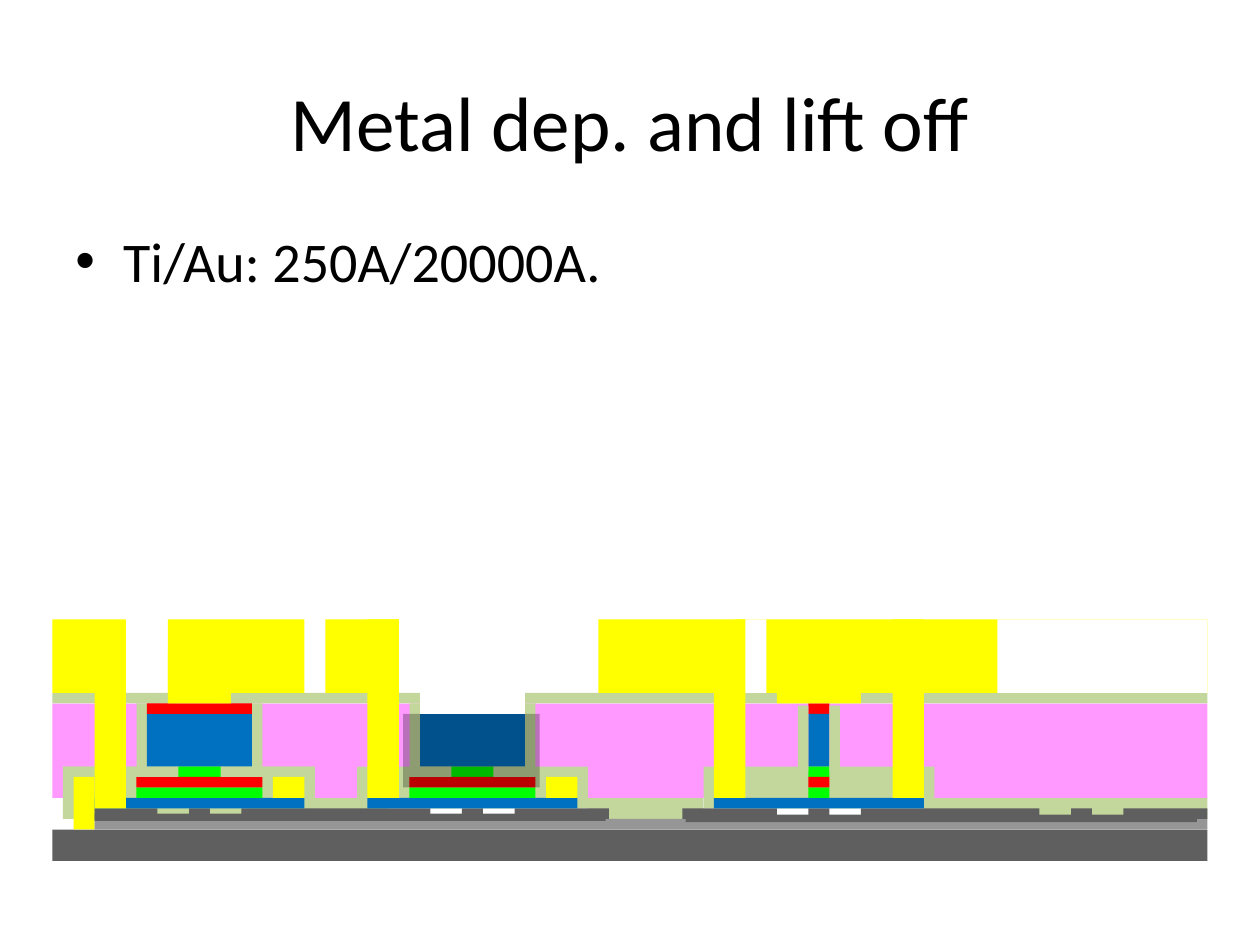
from lxml import etree
from pptx import Presentation
from pptx.dml.color import RGBColor
from pptx.enum import shapes, text
from pptx.oxml import ns
from pptx.util import Inches, Pt

BLACK = RGBColor(0x00, 0x00, 0x00)
WHITE = RGBColor(0xFF, 0xFF, 0xFF)
NITRIDE = RGBColor(0xC3, 0xD6, 0x9B)
POLYMER = RGBColor(0xFF, 0x99, 0xFF)
SILICON = RGBColor(0x5F, 0x5F, 0x5F)
OXIDE = RGBColor(0x96, 0x96, 0x96)
BLUE = RGBColor(0x00, 0x70, 0xC0)
GREEN = RGBColor(0x00, 0xFF, 0x00)
RED = RGBColor(0xFF, 0x00, 0x00)
METAL = RGBColor(0xFF, 0xFF, 0x00)

UNIT = 1 / 12  # the cross-section sits on a grid of twelfths of an inch

prs = Presentation()
prs.slide_width, prs.slide_height = Inches(10), Inches(7.5)
s = prs.slides.add_slide(prs.slide_layouts[6])


def add_text(top, height, words, size):
    tf = s.shapes.add_textbox(Inches(0.5), Inches(top), Inches(9), Inches(height)).text_frame
    tf.word_wrap = True
    p = tf.paragraphs[0]
    p.text = words
    font = p.runs[0].font
    font.name, font.size, font.color.rgb = "Calibri", Pt(size), BLACK
    return tf, p


def add_layer(color, *boxes):
    for box in boxes:
        sp = s.shapes.add_shape(shapes.MSO_SHAPE.RECTANGLE, *[Inches(v * UNIT) for v in box])
        sp.shadow.inherit = False
        sp.fill.solid()
        sp.fill.fore_color.rgb = color
        sp.line.fill.background()
    return sp


# Title
tf, p = add_text(0.33, 1.25, "Metal dep. and lift off", 44)
tf.vertical_anchor = text.MSO_ANCHOR.MIDDLE
p.alignment = text.PP_ALIGN.CENTER

# Bullet
tf, p = add_text(1.75, 3, "Ti/Au: 250A/20000A.", 32)
pPr = p._p.get_or_add_pPr()
pPr.set("marL", str(Inches(0.38)))
pPr.set("indent", str(-Inches(0.38)))
before = etree.SubElement(pPr, ns.qn("a:spcBef"))
etree.SubElement(before, ns.qn("a:spcPct"), val="20000")
etree.SubElement(pPr, ns.qn("a:buFont"), typeface="Arial")
etree.SubElement(pPr, ns.qn("a:buChar"), char="•")

# Passivation and planarising fill: left, top, width, height in grid units
add_layer(NITRIDE, (5, 66, 110, 1))
add_layer(POLYMER, (5, 67, 110, 9))
add_layer(NITRIDE, (88, 76, 27, 2), (26, 76, 11, 2), (56, 76, 11, 2),
          (34, 73, 22, 4), (6, 73, 24, 5), (67, 73, 22, 4))

# Substrate, buried oxide and waveguide layer with its slots
add_layer(OXIDE, (9, 78, 49, 1), (58, 78, 57, 1))
add_layer(SILICON, (5, 79, 110, 3))
for left, width in [(9, 6), (18, 2), (23, 18), (44, 2), (49, 9), (65, 9),
                    (77, 2), (82, 17), (102, 2), (107, 8)]:
    add_layer(SILICON, (left, 77, width, 1))
add_layer(SILICON, (9, 77.5, 48.7, 0.7), (65.3, 77.6, 48.7, 0.7))

# Bottom contact layers
for left in (9, 35, 68):
    add_layer(BLUE, (left, 76, 20, 1))

# Two wide mesas with their side walls
for left in (13, 39):
    add_layer(GREEN, (left, 75, 12, 1), (left + 1, 73, 10, 1))
    add_layer(RED, (left, 74, 12, 1))
    add_layer(NITRIDE, (left, 67, 4, 7), (left + 8, 67, 4, 7))
    add_layer(BLUE, (left + 1, 68, 10, 5))
add_layer(RED, (14, 67, 10, 1))

# Narrow pillar with its side walls
add_layer(GREEN, (77, 75, 2, 1), (77, 73, 2, 1))
add_layer(RED, (77, 74, 2, 1), (77, 67, 2, 1))
add_layer(BLUE, (77, 68, 2, 5))
add_layer(NITRIDE, (76, 67.2, 1, 6.2), (79, 67.2, 1, 6.2))

# Contact metal
add_layer(METAL, (7, 74, 2, 5), (26, 74, 3, 2), (52, 74, 3, 2),
          (16, 62, 6, 5), (74, 62, 8, 5))

# Deposited metal: pads on top and vias down to the contacts
for left, width in [(5, 7), (16, 13), (31, 7), (57, 11), (70, 45)]:
    add_layer(METAL, (left, 59, width, 7))
add_layer(METAL, (9, 60, 3, 17))
for left in (35, 68, 85):
    add_layer(METAL, (left, 59, 3, 17))

# Lifted-off areas
add_layer(WHITE, (71, 59, 2, 7), (95, 59, 20, 7))

# Shaded detector mesa and the opening above it
shade = add_layer(BLACK, (38.4, 68, 13, 7))
color = shade.fill._xPr.find(".//" + ns.qn("a:srgbClr"))
etree.SubElement(color, ns.qn("a:alpha"), val="27000")
add_layer(WHITE, (40, 60, 10, 8))

prs.save("out.pptx")
